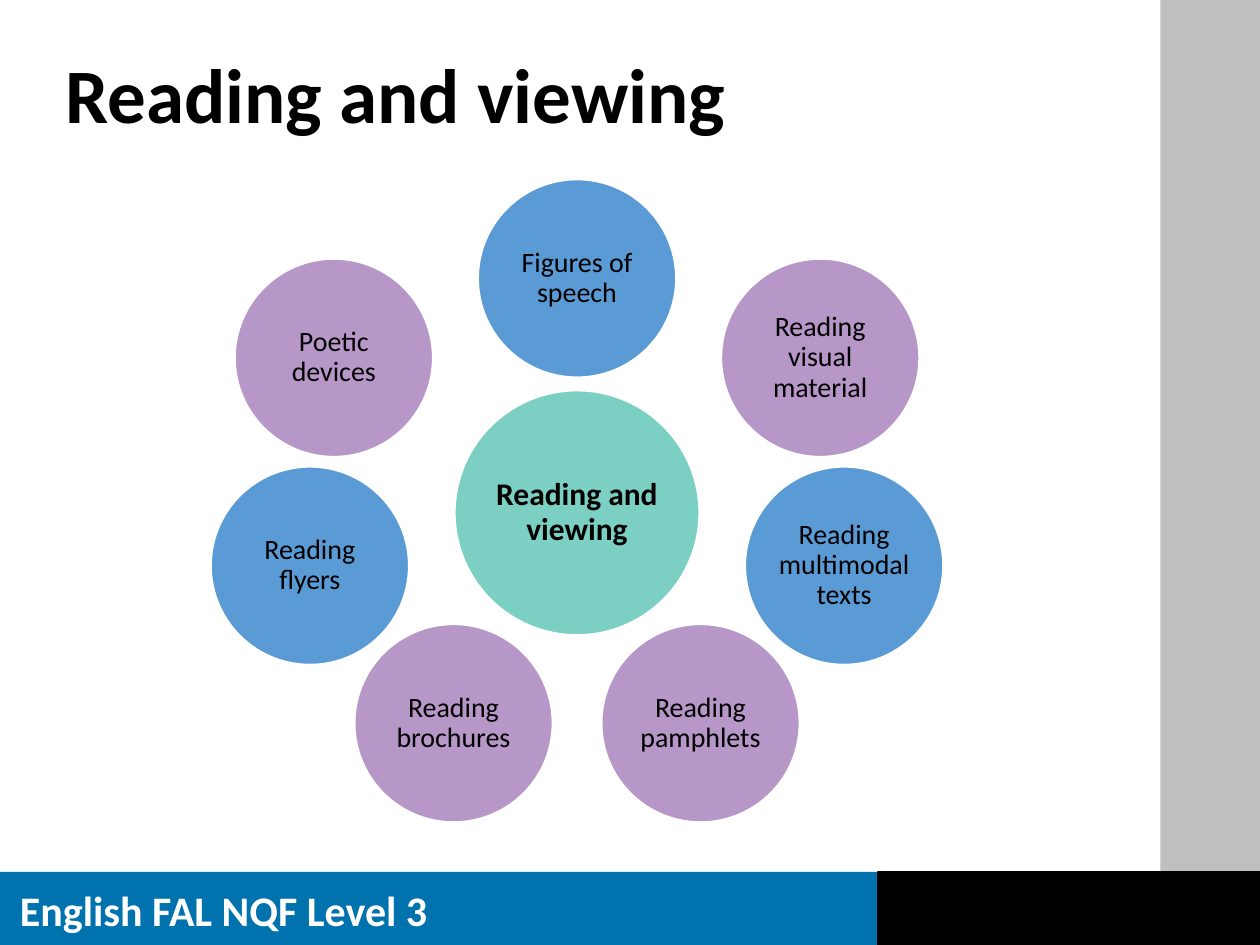
from pptx import Presentation
from pptx.dml.color import RGBColor
from pptx.enum.shapes import MSO_SHAPE
from pptx.enum.text import MSO_ANCHOR, PP_ALIGN
from pptx.util import Inches, Pt

W, H = 10, 7.5
COLORS = {
    "grey": "BFBFBF", "bar": "0072AE", "black": "000000", "white": "FFFFFF",
    "hub": "7BD0C3", "blue": "5B9BD5", "purple": "B697C7",
}
TITLE = "Reading and viewing"
FOOTER = "English FAL NQF Level 3"

BAR_TOP = 6.92
# left, top, width, height, fill, outline
BANDS = [
    (9.21, 0, W - 9.21, 7.49, "grey", None),
    (0, BAR_TOP, W, 0.59, "bar", None),
    (6.97, BAR_TOP, W - 6.97, H - BAR_TOP, "black", "black"),
]

HUB_CENTER = (4.58, 4.07)
HUB_SIZE, TOPIC_SIZE = 1.94, 1.57
# Rows of topics around the hub: vertical offset, horizontal offset, fill, topics
TOPIC_ROWS = [
    (-1.86, 0, "blue", ["Figures of speech"]),
    (-1.23, 1.93, "purple", ["Poetic devices", "Reading visual material"]),
    (0.42, 2.12, "blue", ["Reading flyers", "Reading multimodal texts"]),
    (1.67, 0.98, "purple", ["Reading brochures", "Reading pamphlets"]),
]


def rgb(name):
    return RGBColor.from_string(COLORS[name])


def add_filled(slide, kind, box, fill, line=None):
    sp = slide.shapes.add_shape(kind, *map(Inches, box))
    sp.shadow.inherit = False
    sp.fill.solid()
    sp.fill.fore_color.rgb = rgb(fill)
    if line:
        sp.line.color.rgb = rgb(line)
        sp.line.width = Pt(1)
    else:
        sp.line.fill.background()
    return sp


def write(sp, text, size, color="black", bold=False, align=PP_ALIGN.LEFT, spacing=0.9):
    tf = sp.text_frame
    tf.word_wrap = True
    p = tf.paragraphs[0]
    p.alignment = align
    p.line_spacing = spacing
    r = p.add_run()
    r.text = text
    r.font.name = "Calibri"
    r.font.size = Pt(size)
    r.font.bold = bold
    r.font.color.rgb = rgb(color)
    return tf


def add_circle(slide, cx, cy, size, fill, text, font_size, inset, bold=False):
    box = (cx - size / 2, cy - size / 2, size, size)
    sp = add_filled(slide, MSO_SHAPE.OVAL, box, fill, "white")
    tf = write(sp, text, font_size, bold=bold, align=PP_ALIGN.CENTER)
    tf.vertical_anchor = MSO_ANCHOR.MIDDLE
    tf.margin_left = tf.margin_right = Inches(inset)
    tf.margin_top = tf.margin_bottom = Inches(inset)


def add_label(slide, box, *args, **kwargs):
    tb = slide.shapes.add_textbox(*map(Inches, box))
    write(tb, *args, bold=True, **kwargs)


def main():
    prs = Presentation()
    prs.slide_width, prs.slide_height = Inches(W), Inches(H)
    slide = prs.slides.add_slide(prs.slide_layouts[6])

    for *box, fill, line in BANDS:
        add_filled(slide, MSO_SHAPE.RECTANGLE, box, fill, line)
    add_label(slide, (0.06, 6.97, 3.75, 0.5), FOOTER, 24, "white", spacing=1.0)
    add_label(slide, (0.42, 0.4, 8.65, 0.79), TITLE, 44)

    cx, cy = HUB_CENTER
    add_circle(slide, cx, cy, HUB_SIZE, "hub", TITLE, 18, 0.03, bold=True)
    for dy, dx, fill, topics in TOPIC_ROWS:
        for side, topic in zip((-1, 1), topics):
            add_circle(slide, cx + side * dx, cy + dy, TOPIC_SIZE, fill, topic, 16, 0.02)

    prs.save("out.pptx")


if __name__ == "__main__":
    main()
